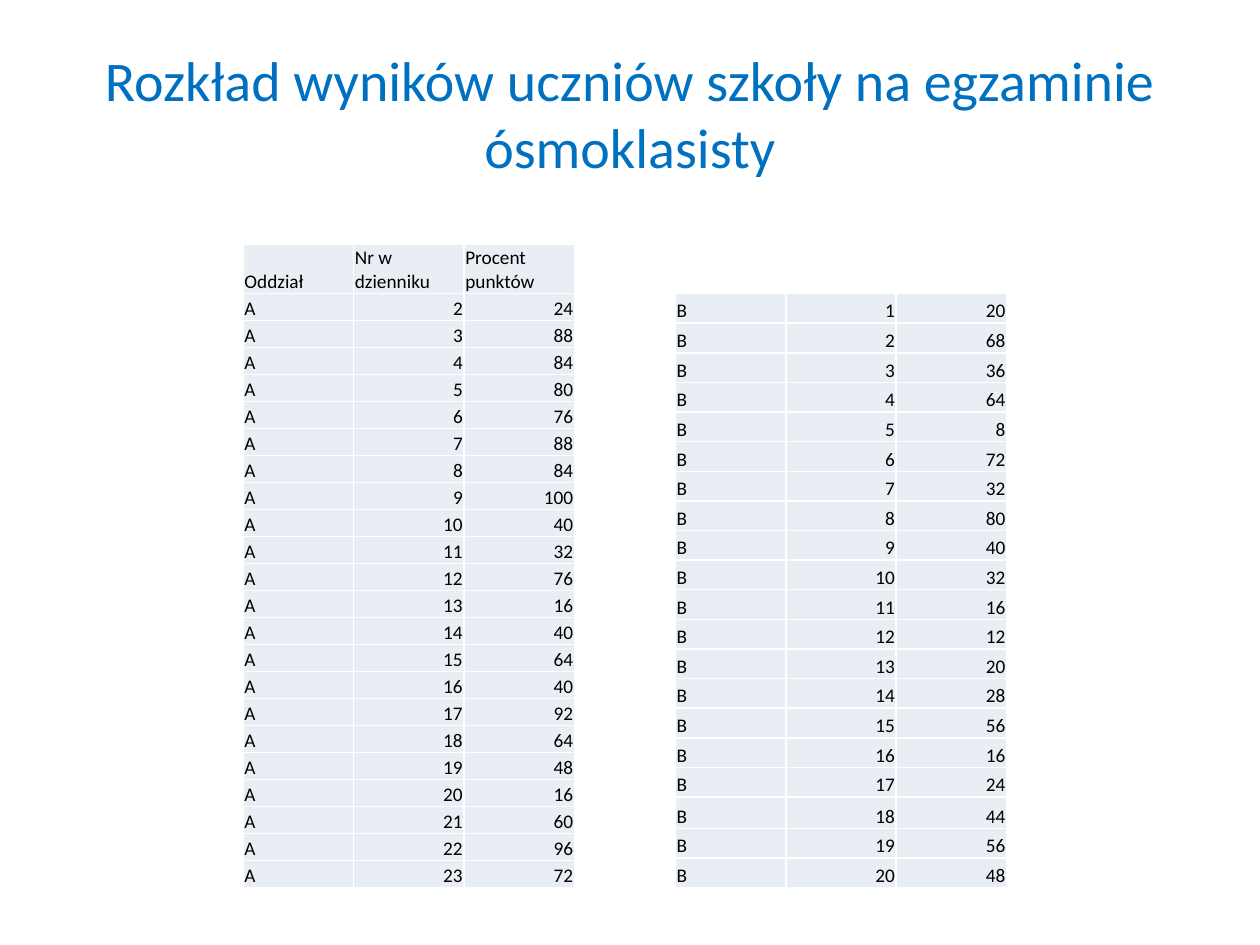
from pptx import Presentation
from pptx.dml.color import RGBColor
from pptx.enum.text import MSO_ANCHOR, PP_ALIGN
from pptx.util import Inches, Pt

LEFT, CENTER, RIGHT = PP_ALIGN.LEFT, PP_ALIGN.CENTER, PP_ALIGN.RIGHT
BOTTOM = MSO_ANCHOR.BOTTOM

FONT = "Calibri"
TITLE_BLUE, TEXT_BLACK, CELL_FILL = "0070C0", "000000", "E9EDF4"
COLUMN_WIDTH = 2.63 / 3

TITLE = "Rozkład wyników uczniów szkoły na egzaminie ósmoklasisty"
HEADINGS = ("Oddział", "Nr w dzienniku", "Procent punktów")
SCORES_A = (24, 88, 84, 80, 76, 88, 84, 100, 40, 32, 76,
            16, 40, 64, 40, 92, 64, 48, 16, 60, 96, 72)
SCORES_B = (20, 68, 36, 64, 8, 72, 32, 80, 40, 32,
            16, 12, 20, 28, 56, 16, 24, 44, 56, 48)


def color(hex_value):
    return RGBColor.from_string(hex_value)


def style_paragraph(paragraph, size, hex_value, alignment):
    paragraph.alignment = alignment
    paragraph.font.name = FONT
    paragraph.font.size = Pt(size)
    paragraph.font.color.rgb = color(hex_value)


def add_title(slide):
    title = slide.shapes.add_textbox(Inches(0.5), Inches(0.31), Inches(9), Inches(1.34))
    title.text_frame.word_wrap = True
    paragraph = title.text_frame.paragraphs[0]
    paragraph.text = TITLE
    paragraph.space_before = Pt(2)
    style_paragraph(paragraph, 32, TITLE_BLUE, CENTER)


def class_rows(class_name, first_number, scores):
    return [(class_name, number, score)
            for number, score in enumerate(scores, first_number)]


def fill_cell(cell, value):
    cell.fill.solid()
    cell.fill.fore_color.rgb = color(CELL_FILL)
    cell.vertical_anchor = BOTTOM
    cell.margin_left = cell.margin_top = cell.margin_right = Inches(0.01)
    cell.margin_bottom = 0
    cell.text = str(value)
    alignment = RIGHT if isinstance(value, int) else LEFT
    style_paragraph(cell.text_frame.paragraphs[0], 11, TEXT_BLACK, alignment)


def add_results(slide, left, top, rows, heights):
    results = slide.shapes.add_table(
        len(rows), len(HEADINGS), Inches(left), Inches(top),
        Inches(COLUMN_WIDTH * len(HEADINGS)), Inches(sum(heights))).table
    # The table style supplies the white grid lines
    results.first_row = False
    results.horz_banding = False
    for column in results.columns:
        column.width = Inches(COLUMN_WIDTH)
    for row, height, values in zip(results.rows, heights, rows):
        row.height = Inches(height)
        for cell, value in zip(row.cells, values):
            fill_cell(cell, value)


def main():
    presentation = Presentation()
    presentation.slide_width, presentation.slide_height = Inches(10), Inches(7.5)
    slide = presentation.slides.add_slide(presentation.slide_layouts[6])
    add_title(slide)

    # Class A, with the headings in a taller first row
    rows_a = [HEADINGS] + class_rows("A", 2, SCORES_A)
    heights_a = [0.39] + [(5.11 - 0.39) / len(SCORES_A)] * len(SCORES_A)
    add_results(slide, 1.93, 1.94, rows_a, heights_a)

    # Class B, where row 18 is slightly taller
    rows_b = class_rows("B", 1, SCORES_B)
    heights_b = [(4.72 - 0.25) / (len(SCORES_B) - 1)] * len(SCORES_B)
    heights_b[17] = 0.25
    add_results(slide, 5.36, 2.33, rows_b, heights_b)

    presentation.save("out.pptx")


if __name__ == "__main__":
    main()
